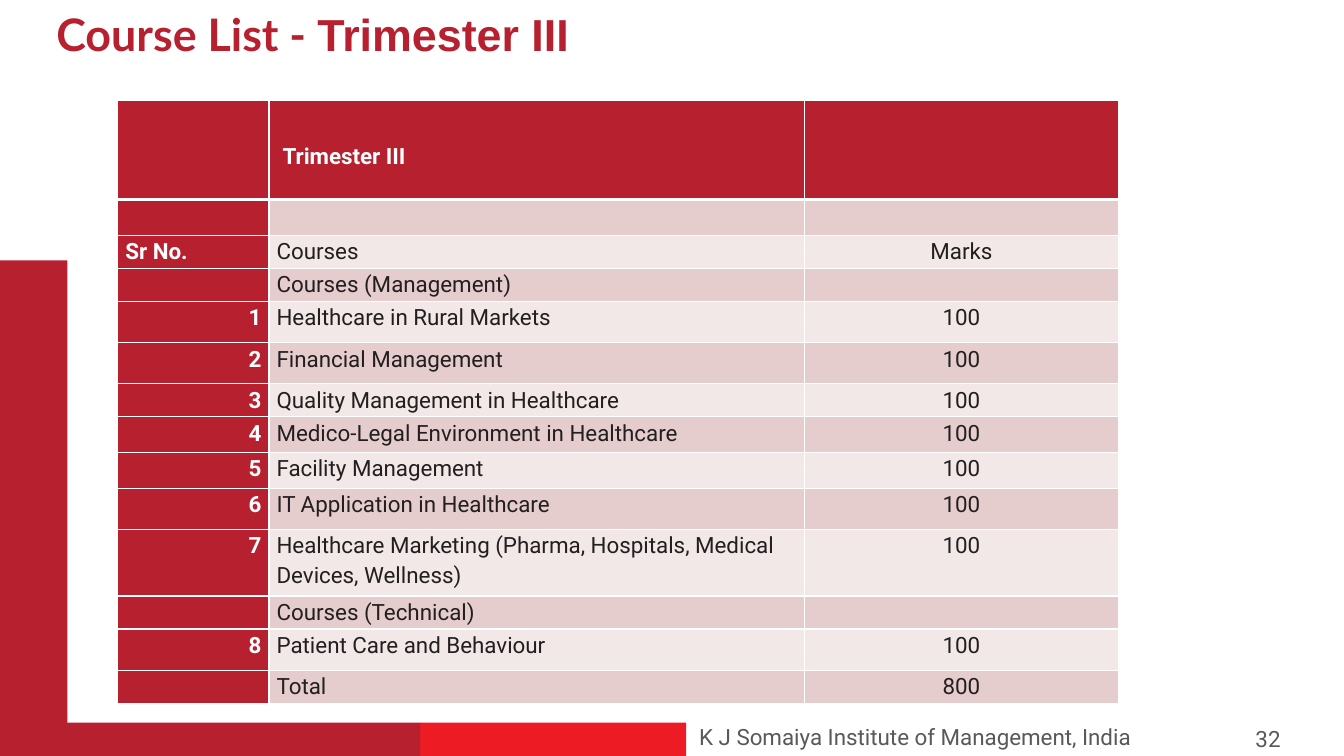
from dataclasses import dataclass

import lxml.etree
import pptx
import pptx.dml.color
import pptx.enum.shapes
import pptx.enum.text
import pptx.oxml.ns
import pptx.util

Cm = pptx.util.Cm
Pt = pptx.util.Pt
Align = pptx.enum.text.PP_ALIGN
Anchor = pptx.enum.text.MSO_ANCHOR


@dataclass(frozen=True)
class Theme:
    crimson: str = "B7202E"
    scarlet: str = "ED1C24"
    rose: str = "E6CDCD"
    blush: str = "F3E8E8"
    white: str = "FFFFFF"
    ink: str = "231F20"
    grey: str = "58595B"
    title_size: int = 32
    body_size: int = 16
    title_font: str = "Lato"
    title_end_font: str = "Arial"
    body_font: str = "Roboto"


@dataclass(frozen=True)
class Bar:
    left: float
    top: float
    width: float
    height: float
    color: str


@dataclass(frozen=True)
class Label:
    left: float
    top: float
    width: float
    height: float
    text: str


@dataclass(frozen=True)
class CourseRow:
    height: float
    number: str = ""
    course: str = ""
    marks: str = ""


THEME = Theme()

BARS = [
    Bar(0, 6.56, 1.7, 12.49, THEME.crimson),
    Bar(10.59, 18.21, 6.7, 0.84, THEME.scarlet),
    Bar(0, 18.21, 10.59, 0.84, THEME.crimson),
]

FOOTERS = [
    Label(17.37, 18.11, 12.93, 0.94, "K J Somaiya Institute of Management, India"),
    Label(31.39, 18.16, 2.21, 1.02, "32"),
]

COLUMN_WIDTHS = [3.81, 13.5, 7.9]

COURSE_ROWS = [
    CourseRow(2.49, course="Trimester III"),
    CourseRow(0.9),
    CourseRow(0.83, "Sr No.", "Courses", "Marks"),
    CourseRow(0.83, course="Courses (Management)"),
    CourseRow(1.04, "1", "Healthcare in Rural Markets", "100"),
    CourseRow(1.04, "2", "Financial Management", "100"),
    CourseRow(0.83, "3", "Quality Management in Healthcare", "100"),
    CourseRow(0.9, "4", "Medico-Legal Environment in Healthcare", "100"),
    CourseRow(0.9, "5", "Facility Management", "100"),
    CourseRow(1.04, "6", "IT Application in Healthcare", "100"),
    CourseRow(1.68, "7", "Healthcare Marketing (Pharma, Hospitals, Medical Devices, Wellness)", "100"),
    CourseRow(0.83, course="Courses (Technical)"),
    CourseRow(1.04, "8", "Patient Care and Behaviour", "100"),
    CourseRow(0.83, course="Total", marks="800"),
]


def rgb(color: str) -> pptx.dml.color.RGBColor:
    return pptx.dml.color.RGBColor.from_string(color)


def style_span(span, font: str, size: int, color: str, bold: bool = False) -> None:
    span.font.name = font
    span.font.size = Pt(size)
    span.font.bold = bold
    span.font.color.rgb = rgb(color)


def add_bar(page, bar: Bar) -> None:
    box = page.shapes.add_shape(
        pptx.enum.shapes.MSO_SHAPE.RECTANGLE,
        Cm(bar.left), Cm(bar.top), Cm(bar.width), Cm(bar.height))
    box.shadow.inherit = False
    box.fill.solid()
    box.fill.fore_color.rgb = rgb(bar.color)
    box.line.fill.background()


def add_label(page, label: Label):
    """Add a wrapping text box and return its paragraph."""
    box = page.shapes.add_textbox(
        Cm(label.left), Cm(label.top), Cm(label.width), Cm(label.height))
    box.text_frame.word_wrap = True
    box.text_frame.text = label.text
    para = box.text_frame.paragraphs[0]
    for span in para.runs:
        style_span(span, THEME.body_font, THEME.body_size, THEME.grey)
    return para


def add_title(page) -> None:
    para = add_label(page, Label(1.17, 0.2, 25.3, 3.05, "Course List - "))
    para.line_spacing = 0.9
    para.add_run().text = "Trimester III"
    for span, font in zip(para.runs, (THEME.title_font, THEME.title_end_font)):
        style_span(span, font, THEME.title_size, THEME.crimson, bold=True)


def set_borders(cell, top: int, bottom: int) -> None:
    """Draw white borders; widths are in points."""
    properties = cell._tc.get_or_add_tcPr()
    widths = {"lnL": 1, "lnR": 1, "lnT": top, "lnB": bottom}
    for index, (side, width) in enumerate(widths.items()):
        line = lxml.etree.Element(pptx.oxml.ns.qn(f"a:{side}"), w=str(Pt(width)))
        fill = lxml.etree.SubElement(line, pptx.oxml.ns.qn("a:solidFill"))
        lxml.etree.SubElement(fill, pptx.oxml.ns.qn("a:srgbClr"), val=THEME.white)
        properties.insert(index, line)


def fill_cell(cell, text: str, row: int, column: int) -> None:
    accented = row == 0 or column == 0
    band = THEME.rose if row % 2 else THEME.blush
    cell.fill.solid()
    cell.fill.fore_color.rgb = rgb(THEME.crimson if accented else band)
    cell.margin_left = cell.margin_right = Cm(0.19)
    cell.margin_top = cell.margin_bottom = 0
    set_borders(cell, top=3 if row == 1 else 1, bottom=3 if row == 0 else 1)
    if not text:
        return
    cell.text_frame.text = text
    para = cell.text_frame.paragraphs[0]
    para.line_spacing = 1.15
    if column == 2:
        para.alignment = Align.CENTER
    elif text.isdigit():
        para.alignment = Align.RIGHT
    style_span(para.runs[0], THEME.body_font, THEME.body_size,
               THEME.white if accented else THEME.ink, bold=accented)


def add_course_table(page) -> None:
    frame = page.shapes.add_table(
        len(COURSE_ROWS), len(COLUMN_WIDTHS), Cm(2.97), Cm(2.54),
        Cm(sum(COLUMN_WIDTHS)), Cm(sum(row.height for row in COURSE_ROWS)))
    table = frame.table
    table.first_row = table.horz_banding = False
    for column, width in zip(table.columns, COLUMN_WIDTHS):
        column.width = Cm(width)
    for row, entry in enumerate(COURSE_ROWS):
        table.rows[row].height = Cm(entry.height)
        for column, text in enumerate((entry.number, entry.course, entry.marks)):
            fill_cell(table.cell(row, column), text, row, column)
    # The heading sits above the bottom of its tall row
    heading = table.cell(0, 1)
    heading.vertical_anchor = Anchor.BOTTOM
    heading.margin_left = Cm(0.34)
    heading.margin_bottom = Cm(0.76)


def main() -> None:
    deck = pptx.Presentation()
    deck.slide_width, deck.slide_height = Cm(33.87), Cm(19.05)
    page = deck.slides.add_slide(deck.slide_layouts[6])

    # Frame bars and footer
    for bar in BARS:
        add_bar(page, bar)
    for label in FOOTERS:
        add_label(page, label)

    # Title and course table
    add_title(page)
    add_course_table(page)
    deck.save("out.pptx")


if __name__ == "__main__":
    main()
